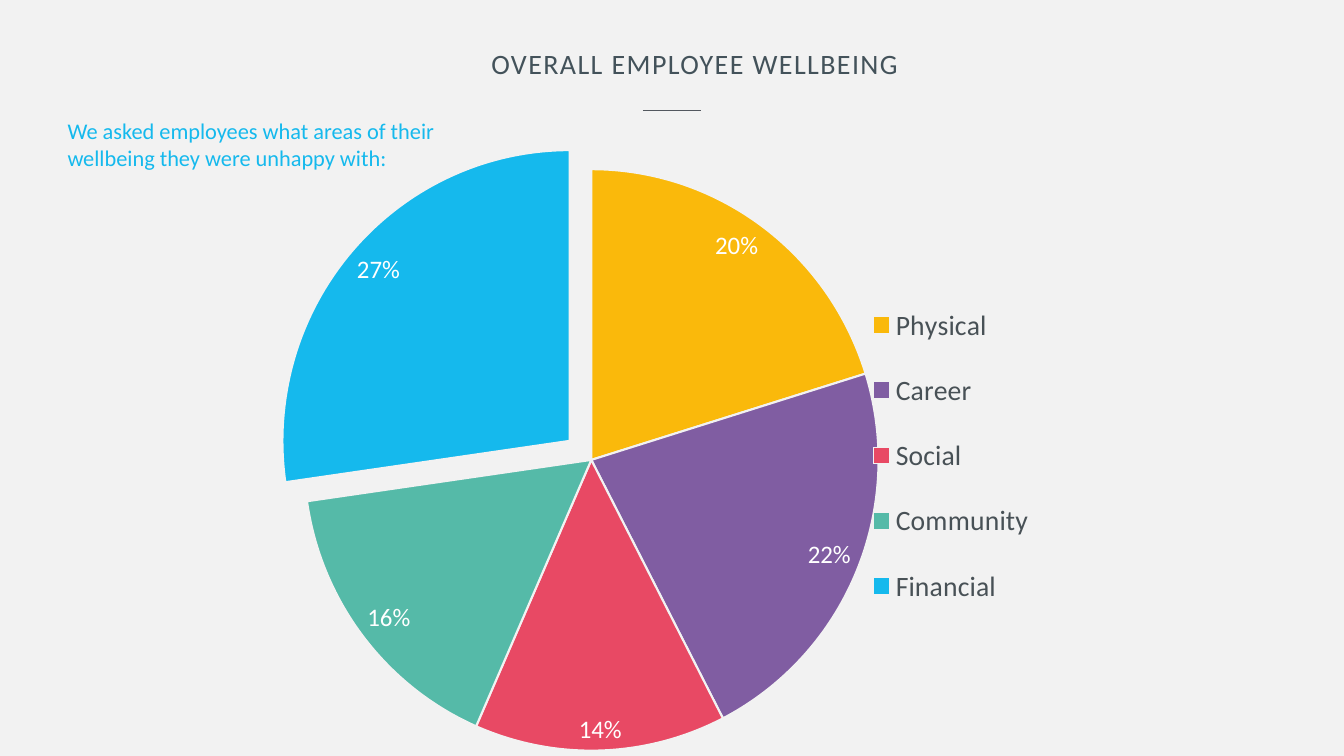
from lxml import etree
from pptx import Presentation
from pptx.chart.data import CategoryChartData
from pptx.dml.color import RGBColor
from pptx.enum.chart import XL_CHART_TYPE, XL_LABEL_POSITION, XL_LEGEND_POSITION
from pptx.enum.shapes import MSO_CONNECTOR
from pptx.enum.text import PP_ALIGN
from pptx.oxml import parse_xml
from pptx.oxml.ns import nsdecls, qn
from pptx.util import Pt

BACKGROUND = RGBColor(0xF2, 0xF2, 0xF2)
SLATE = RGBColor(0x43, 0x52, 0x5A)
LEGEND_GRAY = RGBColor(0x48, 0x51, 0x56)
RULE_GRAY = RGBColor(0x53, 0x58, 0x5F)
WHITE = RGBColor(0xFF, 0xFF, 0xFF)
BLUE = RGBColor(0x15, 0xB9, 0xED)
AREAS = [
    ("Physical", 20, RGBColor(0xFA, 0xB9, 0x0B)),
    ("Career", 22, RGBColor(0x80, 0x5D, 0xA2)),
    ("Social", 14, RGBColor(0xE8, 0x49, 0x64)),
    ("Community", 16, RGBColor(0x55, 0xBA, 0xA8)),
    ("Financial", 27, BLUE),
]
FONT = "Calibri"


def add_text(page, text, left, top, width, height, size, color):
    frame = page.shapes.add_textbox(Pt(left), Pt(top), Pt(width), Pt(height)).text_frame
    frame.word_wrap = True
    frame.margin_left = frame.margin_top = frame.margin_right = frame.margin_bottom = 0
    para = frame.paragraphs[0]
    para.text = text
    para.font.name = FONT
    para.font.size = Pt(size)
    para.font.color.rgb = color
    return para


def manual_layout(x, y, width, height, inner=""):
    return parse_xml(
        f'<c:layout {nsdecls("c")}><c:manualLayout>{inner}'
        '<c:xMode val="edge"/><c:yMode val="edge"/>'
        f'<c:x val="{x}"/><c:y val="{y}"/><c:w val="{width}"/><c:h val="{height}"/>'
        '</c:manualLayout></c:layout>'
    )


deck = Presentation()
deck.slide_width = Pt(960)
deck.slide_height = Pt(540)
page = deck.slides.add_slide(deck.slide_layouts[6])
page.background.fill.solid()
page.background.fill.fore_color.rgb = BACKGROUND

title = add_text(page, "OVERALL EMPLOYEE WELLBEING", 45.5, 36, 901.5, 34.5, 20, SLATE)
title.alignment = PP_ALIGN.CENTER
title.line_spacing = 0.9
title.runs[0].font._element.set("spc", "100")

add_text(page, "We asked employees what areas of their wellbeing they were unhappy with:",
         48.25, 83.5, 305, 34, 16, BLUE)

data = CategoryChartData()
data.categories = [name for name, share, color in AREAS]
data.add_series("Series 1", [share for name, share, color in AREAS])
chart = page.shapes.add_chart(XL_CHART_TYPE.PIE, Pt(201), Pt(106.5), Pt(564.5), Pt(443.5), data).chart
chart.has_title = False
chart.font.name = FONT
chart.font.size = Pt(18)

plot = chart.plots[0]
plot.vary_by_categories = True
series = plot.series[0]
for index, (name, share, color) in enumerate(AREAS):
    slice_format = series.points[index].format
    slice_format.fill.solid()
    slice_format.fill.fore_color.rgb = color
    slice_format.line.color.rgb = BACKGROUND
    slice_format.line.width = Pt(1.5)

financial = series._element.findall(qn("c:dPt"))[-1]
explosion = etree.Element(qn("c:explosion"), val="10")
financial.find(qn("c:spPr")).addprevious(explosion)

plot.has_data_labels = True
labels = plot.data_labels
labels.show_percentage = True
labels.show_value = False
labels.number_format = "0%"
labels.number_format_is_linked = False
labels.position = XL_LABEL_POSITION.INSIDE_END
labels.font.name = FONT
labels.font.size = Pt(18)
labels.font.color.rgb = WHITE

chart.has_legend = True
legend = chart.legend
legend.position = XL_LEGEND_POSITION.RIGHT
legend.include_in_layout = False
legend.font.name = FONT
legend.font.size = Pt(20)
legend.font.color.rgb = LEGEND_GRAY

plot_area = chart._chartSpace.chart.plotArea
for old_layout in plot_area.findall(qn("c:layout")):
    plot_area.remove(old_layout)
plot_area.insert(0, manual_layout(0.016, 0.032, 0.737, 0.937, '<c:layoutTarget val="inner"/>'))
for old_layout in legend._element.findall(qn("c:layout")):
    legend._element.remove(old_layout)
legend._element.find(qn("c:legendPos")).addnext(manual_layout(0.73, 0.206, 0.23, 0.575))

rule = page.shapes.add_connector(MSO_CONNECTOR.STRAIGHT, Pt(459.25), Pt(79), Pt(500.5), Pt(79))
rule.line.color.rgb = RULE_GRAY
rule.line.width = Pt(1)
etree.SubElement(rule._element.spPr, qn("a:effectLst"))

deck.save("out.pptx")
